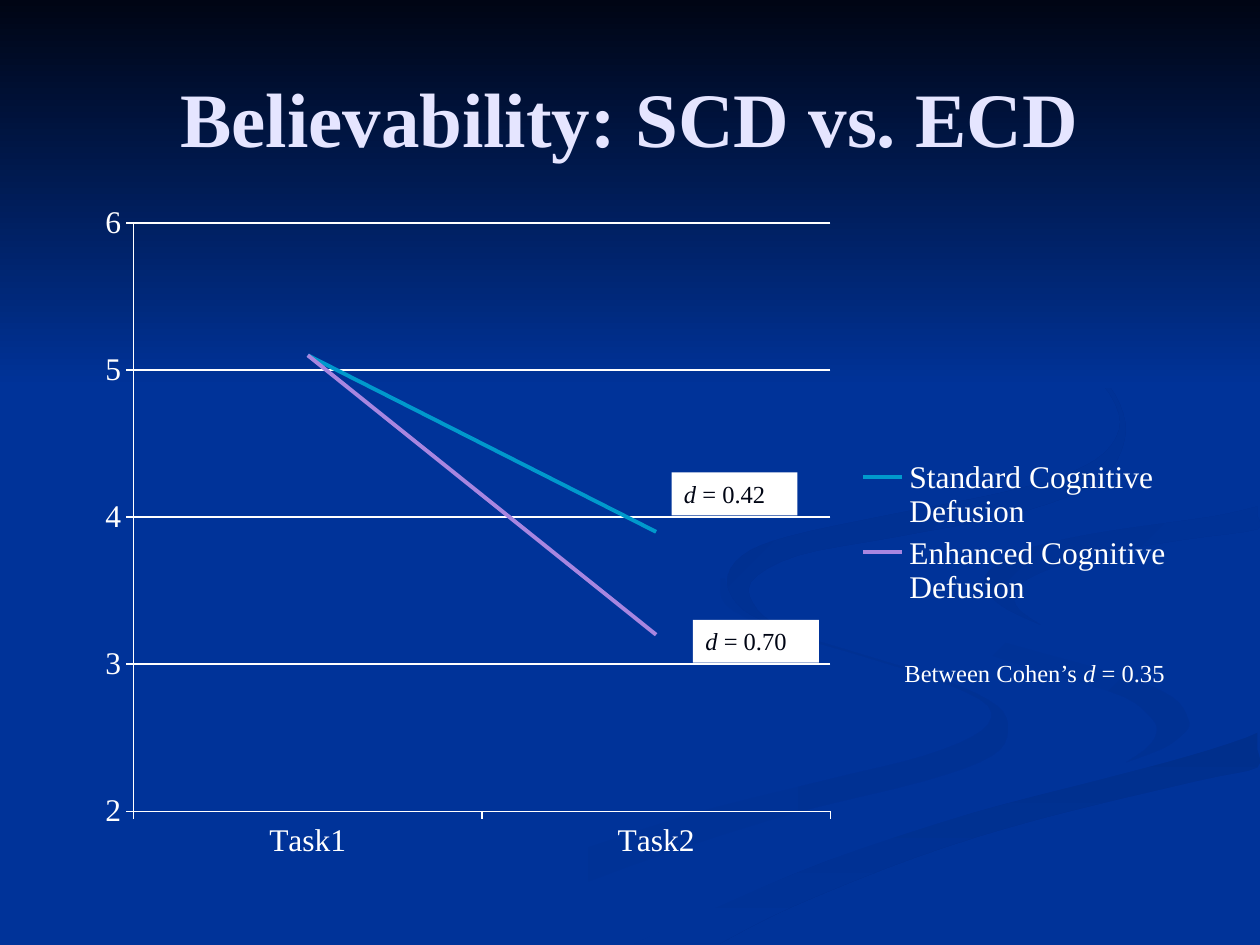
from typing import NamedTuple

from pptx import Presentation
from pptx.chart.data import CategoryChartData
from pptx.dml.color import RGBColor
from pptx.enum.chart import XL_CHART_TYPE, XL_LEGEND_POSITION, XL_TICK_MARK
from pptx.enum.shapes import MSO_SHAPE
from pptx.enum.text import MSO_ANCHOR, PP_ALIGN
from pptx.oxml import parse_xml
from pptx.oxml.ns import nsdecls
from pptx.util import Inches, Pt

FONT = "Times New Roman"
BLUE = RGBColor(0x00, 0x33, 0x99)
NIGHT = RGBColor(0x00, 0x05, 0x14)
WHITE = RGBColor(0xFF, 0xFF, 0xFF)
LAVENDER = RGBColor(0xE5, 0xE5, 0xFF)
CYAN = RGBColor(0x00, 0x99, 0xCC)
PURPLE = RGBColor(0xA8, 0x86, 0xE0)
SOFT_SHADE = RGBColor(0x00, 0x31, 0x93)
BANK_SHADE = RGBColor(0x00, 0x2F, 0x8C)
BEND_SHADE = RGBColor(0x00, 0x30, 0x91)
CREST_SHADE = RGBColor(0x00, 0x2F, 0x8E)
SLIDE_WIDTH, SLIDE_HEIGHT = 10, 7.5
STEPS_PER_SPAN = 4


class Box(NamedTuple):
    left: float
    top: float
    width: float
    height: float


class Station(NamedTuple):
    y: float
    left: float
    right: float


class Gradient(NamedTuple):
    start: RGBColor
    end: RGBColor
    clockwise: int


class Ribbon(NamedTuple):
    gradient: Gradient
    stations: list[tuple[float, float, float]]


class Label(NamedTuple):
    box: Box
    runs: list[tuple[str, bool]]
    color: RGBColor
    fill: RGBColor | None = None


class Line(NamedTuple):
    name: str
    values: tuple[float, float]
    color: RGBColor


RIBBONS = {
    "west stream": Ribbon(Gradient(BLUE, SOFT_SHADE, 0), [
        (4.59, 5.72, 5.75), (4.8, 5.76, 5.86), (5, 6.15, 6.23), (5.2, 6.82, 6.86),
        (5.4, 7.44, 7.5), (5.6, 7.84, 7.91), (5.8, 7.79, 8), (6, 7.33, 7.87),
        (6.2, 6.52, 7.33), (6.5, 5.36, 6.14), (7, 3.93, 4.66), (7.49, 3, 3.61)]),
    "east bend": Ribbon(Gradient(BLUE, SOFT_SHADE, 45), [
        (4.64, 7.24, 7.24), (4.84, 7.3, 7.35), (5, 7.46, 7.65), (5.18, 7.81, 8.26),
        (5.36, 8.38, 8.91), (5.53, 8.92, 9.3), (5.7, 9.14, 9.43), (5.81, 9.18, 9.41),
        (5.93, 9.11, 9.25), (6.05, 8.94, 8.94)]),
    "south bank": Ribbon(Gradient(BANK_SHADE, BLUE, 90), [
        (5.81, 9.98, 9.98), (5.95, 9.6, 9.98), (6.09, 9.07, 9.98), (6.2, 8.67, 9.49),
        (6.5, 7.55, 8.25), (6.8, 6.65, 7.28), (7.2, 5.67, 6.28), (7.49, 5.03, 5.71)]),
    "main stream": Ribbon(Gradient(BLUE, BLUE, 0), [
        (3.87, 9.99, 9.99), (4.02, 9.15, 9.99), (4.15, 8.3, 9.33), (4.27, 7.7, 8.5),
        (4.39, 7.42, 8.05), (4.62, 7.25, 7.81), (4.83, 7.34, 8), (5, 7.65, 8.4),
        (5.19, 8.31, 9.04), (5.38, 8.97, 9.99), (5.53, 9.31, 9.99), (5.7, 9.43, 9.99),
        (5.81, 9.41, 9.99), (6, 9.11, 9.43), (6.2, 8.35, 8.68), (6.45, 7.37, 7.72),
        (6.84, 6.19, 6.54), (7.24, 5.26, 5.6), (7.49, 4.77, 5.03)]),
    "inner bend": Ribbon(Gradient(BEND_SHADE, BLUE, 45), [
        (4.02, 9.98, 9.98), (4.1, 9.62, 9.98), (4.2, 8.9, 9.98), (4.28, 8.45, 9.42),
        (4.37, 8.1, 8.87), (4.47, 7.91, 8.46), (4.6, 7.81, 8.15), (4.72, 7.85, 8.05),
        (4.84, 8, 8.09), (4.96, 8.26, 8.26)]),
    "north crest": Ribbon(Gradient(CREST_SHADE, BLUE, 45), [
        (2.33, 7.62, 7.62), (2.55, 8.07, 8.08), (2.8, 8.47, 8.5), (3.06, 8.76, 8.8),
        (3.35, 8.89, 8.93), (3.6, 8.76, 8.89), (3.78, 8.42, 8.76), (3.92, 7.91, 8.53),
        (4.09, 7.04, 8), (4.26, 6.25, 7.12), (4.41, 5.89, 6.33), (4.62, 5.77, 5.96),
        (4.84, 5.9, 6.01), (5, 6.22, 6.22)]),
}
SKY = Box(0, 0, SLIDE_WIDTH, 3.08)
TITLE = Box(0.5, 0.3, 9, 1.25)
CHART = Box(0.67, 1.53, 8.75, 5.39)
PLOT = Box(1.06, 1.77, 5.53, 4.67)
LEGEND = Box(6.74, 3.6, 2.62, 1.26)
LABELS = [
    Label(Box(5.33, 3.75, 1, 0.34), [("d ", True), ("= 0.42", False)], NIGHT, WHITE),
    Label(Box(5.5, 4.92, 1, 0.34), [("d ", True), ("= 0.70", False)], NIGHT, WHITE),
    Label(Box(7.08, 5.17, 2.42, 0.34),
          [("Between Cohen’s ", False), ("d ", True), ("= 0.35", False)], WHITE),
]
LINES = [Line("Standard Cognitive Defusion", (5.1, 3.9), CYAN),
         Line("Enhanced Cognitive Defusion", (5.1, 3.2), PURPLE)]


def emu(box: Box) -> list[int]:
    return [Inches(length) for length in box]


def set_all(target, values: dict) -> None:
    for name, value in values.items():
        setattr(target, name, value)


def set_font(font, color: RGBColor, **values) -> None:
    set_all(font, {"name": FONT, **values})
    font.color.rgb = color


def spline(a: float, b: float, c: float, d: float, t: float) -> float:
    return b + t / 2 * (c - a + t * (2 * a - 5 * b + 4 * c - d + t * (3 * (b - c) + d - a)))


def smooth(edge: list[tuple[float, float]]) -> list[tuple[float, float]]:
    padded = [edge[0], *edge, edge[-1]]
    curve = []
    for knots in zip(padded, padded[1:], padded[2:], padded[3:]):
        xs, ys = zip(*knots)
        for step in range(STEPS_PER_SPAN):
            t = step / STEPS_PER_SPAN
            curve.append((min(spline(*xs, t), SLIDE_WIDTH), spline(*ys, t)))
    return [*curve, edge[-1]]


def paint(sp, gradient: Gradient) -> None:
    sp.shadow.inherit = False
    sp.line.fill.background()
    sp.fill.gradient()
    sp.fill.gradient_angle = (360 - gradient.clockwise) % 360
    for stop, color in zip(sp.fill.gradient_stops, (gradient.start, gradient.end)):
        stop.color.rgb = color


def draw_ribbon(s, ribbon: Ribbon) -> None:
    stations = [Station(*row) for row in ribbon.stations]
    left = smooth([(station.left, station.y) for station in stations])
    right = smooth([(station.right, station.y) for station in stations])
    outline = [(Inches(x), Inches(y)) for x, y in left + right[::-1]]
    builder = s.shapes.build_freeform(*outline[0])
    builder.add_line_segments(outline[1:], close=True)
    paint(builder.convert_to_shape(), ribbon.gradient)


def draw_title(s, text: str) -> None:
    tf = s.shapes.add_textbox(*emu(TITLE)).text_frame
    set_all(tf, {"word_wrap": True, "vertical_anchor": MSO_ANCHOR.MIDDLE})
    p = tf.paragraphs[0]
    p.alignment = PP_ALIGN.CENTER
    r = p.add_run()
    r.text = text
    set_font(r.font, LAVENDER, size=Pt(44), bold=True)


def draw_label(s, label: Label) -> None:
    sp = s.shapes.add_textbox(*emu(label.box))
    if label.fill is not None:
        sp.fill.solid()
        sp.fill.fore_color.rgb = label.fill
    sp.text_frame.word_wrap = True
    for text, italic in label.runs:
        r = sp.text_frame.paragraphs[0].add_run()
        r.text = text
        set_font(r.font, label.color, size=Pt(14), italic=italic)


def place(element, box: Box, index: int, target: str = "") -> None:
    shares = ((box.left - CHART.left) / CHART.width, (box.top - CHART.top) / CHART.height,
              box.width / CHART.width, box.height / CHART.height)
    sizes = "".join(f'<c:{key} val="{share:.4f}"/>' for key, share in zip("xywh", shares))
    for old in element.xpath("c:layout"):
        element.remove(old)
    element.insert(index, parse_xml(
        f'<c:layout {nsdecls("c")}><c:manualLayout>{target}<c:xMode val="edge"/>'
        f'<c:yMode val="edge"/>{sizes}</c:manualLayout></c:layout>'))


def draw_chart(s) -> None:
    data = CategoryChartData()
    data.categories = ["Task1", "Task2"]
    for line in LINES:
        data.add_series(line.name, line.values)
    chart = s.shapes.add_chart(XL_CHART_TYPE.LINE, *emu(CHART), data).chart
    set_all(chart, {"has_title": False, "has_legend": True})
    set_font(chart.font, WHITE, size=Pt(18))
    set_all(chart.legend, {"position": XL_LEGEND_POSITION.RIGHT, "include_in_layout": False})
    value_axis, category_axis = chart.value_axis, chart.category_axis
    set_all(value_axis, {"minimum_scale": 2, "maximum_scale": 6, "major_unit": 1,
                         "has_major_gridlines": True})
    for axis in (value_axis, category_axis):
        axis.major_tick_mark = XL_TICK_MARK.OUTSIDE
    for part in (value_axis, category_axis, value_axis.major_gridlines):
        part.format.line.color.rgb = WHITE
        part.format.line.width = Pt(0.75)
    chart.plots[0].vary_by_categories = False
    for series, line in zip(chart.plots[0].series, LINES):
        series.smooth = False
        series.format.line.color.rgb = line.color
        series.format.line.width = Pt(2.25)
    place(chart.element.xpath("c:chart/c:plotArea")[0], PLOT, 0,
          '<c:layoutTarget val="inner"/>')
    place(chart.element.xpath("c:chart/c:legend")[0], LEGEND, 1)


def main() -> None:
    prs = Presentation()
    prs.slide_width, prs.slide_height = Inches(SLIDE_WIDTH), Inches(SLIDE_HEIGHT)
    s = prs.slides.add_slide(prs.slide_layouts[6])
    s.background.fill.solid()
    s.background.fill.fore_color.rgb = BLUE
    for ribbon in RIBBONS.values():
        draw_ribbon(s, ribbon)
    paint(s.shapes.add_shape(MSO_SHAPE.RECTANGLE, *emu(SKY)), Gradient(NIGHT, BLUE, 90))
    draw_title(s, "Believability: SCD vs. ECD")
    draw_chart(s)
    for label in LABELS:
        draw_label(s, label)
    prs.save("out.pptx")


if __name__ == "__main__":
    main()
